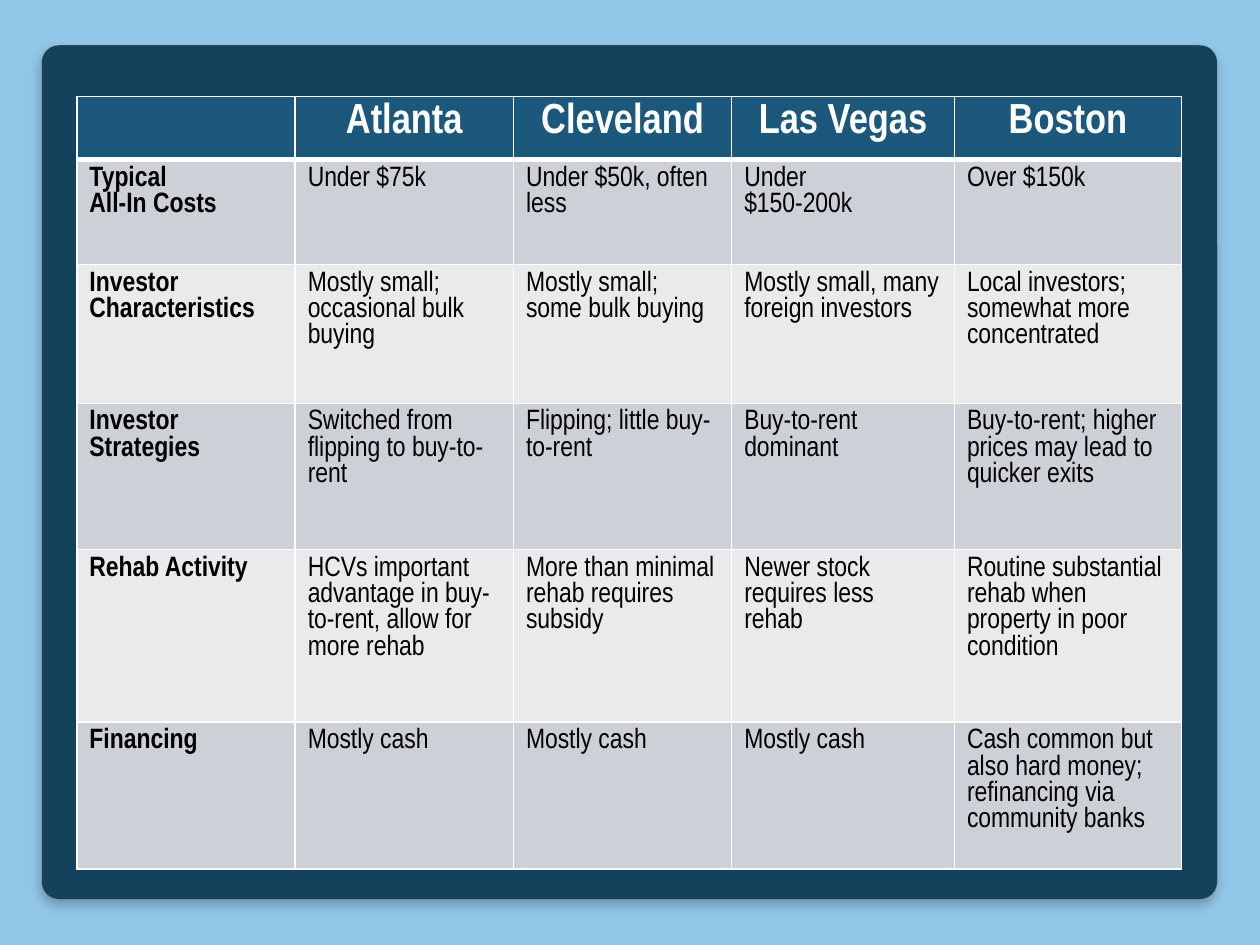
from lxml import etree
from pptx import Presentation
from pptx import util as u
from pptx.dml.color import RGBColor
from pptx.enum import shapes, text
from pptx.oxml import ns

COLORS = {
    "background": "91C7E7",
    "panel": "14425D",
    "outline": "A4A4A4",
    "shadow": "000000",
    "header": "1B587C",
    "odd": "CDD1D7",
    "even": "E8EAEC",
    "white": "FFFFFF",
    "body": "000000",
}
FONT = "Arial Narrow"
COLUMN_WIDTHS = [4.4, 4.4, 4.4, 4.49, 4.58]
ROW_HEIGHTS = [1.27, 2.11, 2.8, 2.95, 3.48, 2.96]
ROWS = [
    ["", "Atlanta", "Cleveland", "Las Vegas", "Boston"],
    ["Typical\nAll-In Costs", "Under $75k", "Under $50k, often less",
     "Under\n$150-200k", "Over $150k"],
    ["Investor Characteristics", "Mostly small; occasional bulk buying",
     "Mostly small; some bulk buying", "Mostly small, many foreign investors",
     "Local investors; somewhat more concentrated"],
    ["Investor Strategies", "Switched from flipping to buy-to-rent",
     "Flipping; little buy-to-rent", "Buy-to-rent dominant",
     "Buy-to-rent; higher prices may lead to quicker exits"],
    ["Rehab Activity", "HCVs important advantage in buy-to-rent, allow for more rehab",
     "More than minimal rehab requires subsidy", "Newer stock requires less\nrehab",
     "Routine substantial rehab when property in poor condition"],
    ["Financing", "Mostly cash", "Mostly cash", "Mostly cash",
     "Cash common but also hard money; refinancing via community banks"],
]


def color(name):
    return RGBColor.from_string(COLORS[name])


def paint(fill, name):
    fill.solid()
    fill.fore_color.rgb = color(name)


def add_color(parent, name):
    return etree.SubElement(parent, ns.qn("a:srgbClr"), val=COLORS[name])


def add_panel(page, left, top, width, height):
    panel = page.shapes.add_shape(
        shapes.MSO_SHAPE.ROUNDED_RECTANGLE, u.Cm(left), u.Cm(top), u.Cm(width), u.Cm(height))
    panel.adjustments[0] = 0.02
    paint(panel.fill, "panel")
    panel.line.color.rgb = color("outline")
    panel.line.width = u.Pt(0.16)
    panel.shadow.inherit = False
    effects = panel.element.spPr.find(ns.qn("a:effectLst"))
    shadow = etree.SubElement(
        effects, ns.qn("a:outerShdw"), blurRad=str(u.Pt(6)), dist=str(u.Pt(4)),
        dir="5400000", algn="t", rotWithShape="0")
    etree.SubElement(add_color(shadow, "shadow"), ns.qn("a:alpha"), val="25000")


def set_borders(cell, top, bottom):
    properties = cell._tc.get_or_add_tcPr()
    for index, (side, width) in enumerate(
            [("lnL", 1), ("lnR", 1), ("lnT", top), ("lnB", bottom)]):
        border = etree.Element(ns.qn(f"a:{side}"), w=str(u.Pt(width)))
        add_color(etree.SubElement(border, ns.qn("a:solidFill")), "white")
        properties.insert(index, border)


def fill_cell(cell, words, row, column):
    header = row == 0
    cell.text = words
    paint(cell.fill, "header" if header else "odd" if row % 2 else "even")
    set_borders(cell, 3 if row == 1 else 1, 3 if header else 1)
    for para in cell.text_frame.paragraphs:
        para.alignment = text.PP_ALIGN.CENTER if header else text.PP_ALIGN.LEFT
        para.font.name = FONT
        para.font.size = u.Pt(24 if header else 16)
        para.font.bold = header or column == 0
        para.font.color.rgb = color("white" if header else "body")


def add_city_table(page, left, top):
    frame = page.shapes.add_table(
        len(ROWS), len(COLUMN_WIDTHS), u.Cm(left), u.Cm(top),
        u.Cm(sum(COLUMN_WIDTHS)), u.Cm(sum(ROW_HEIGHTS)))
    table = frame.table
    for column, width in zip(table.columns, COLUMN_WIDTHS):
        column.width = u.Cm(width)
    for row, height in zip(table.rows, ROW_HEIGHTS):
        row.height = u.Cm(height)
    for row, entries in enumerate(ROWS):
        for column, words in enumerate(entries):
            fill_cell(table.cell(row, column), words, row, column)


def main():
    deck = Presentation()
    deck.slide_width, deck.slide_height = u.Cm(25.4), u.Cm(19.05)
    page = deck.slides.add_slide(deck.slide_layouts[6])
    paint(page.background.fill, "background")
    add_panel(page, 0.84, 0.91, 23.7, 17.22)
    add_city_table(page, 1.55, 1.95)
    deck.save("out.pptx")


if __name__ == "__main__":
    main()
